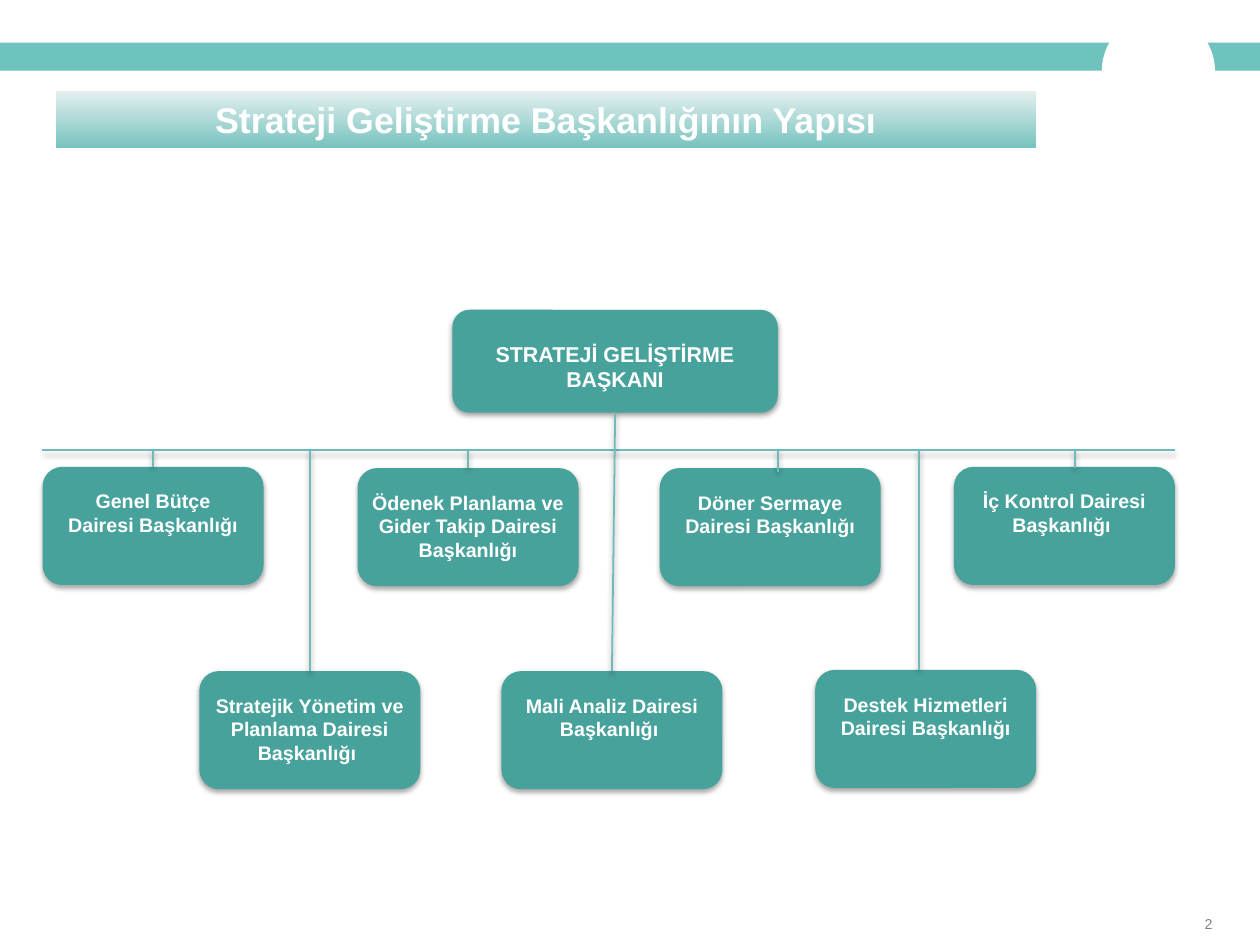
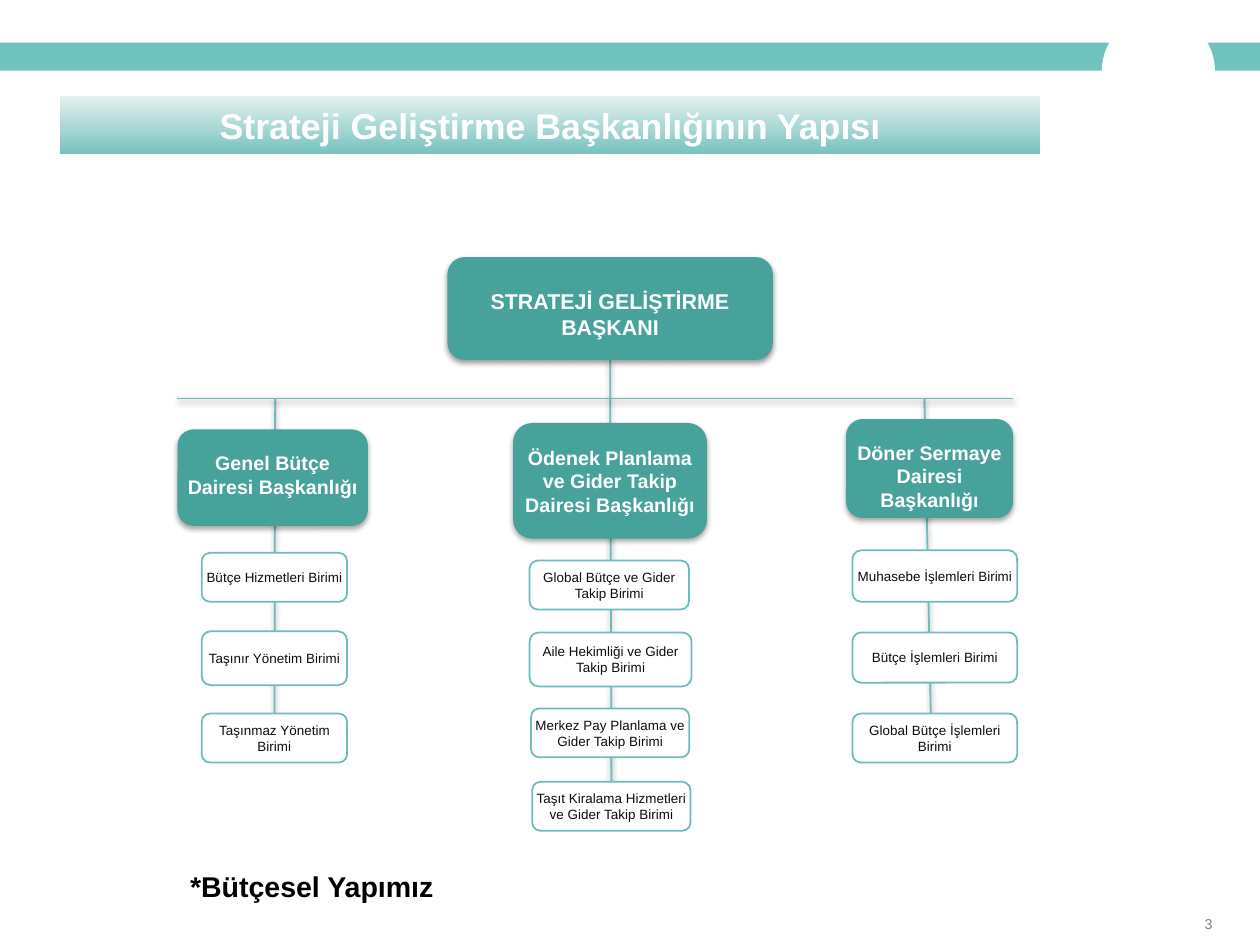
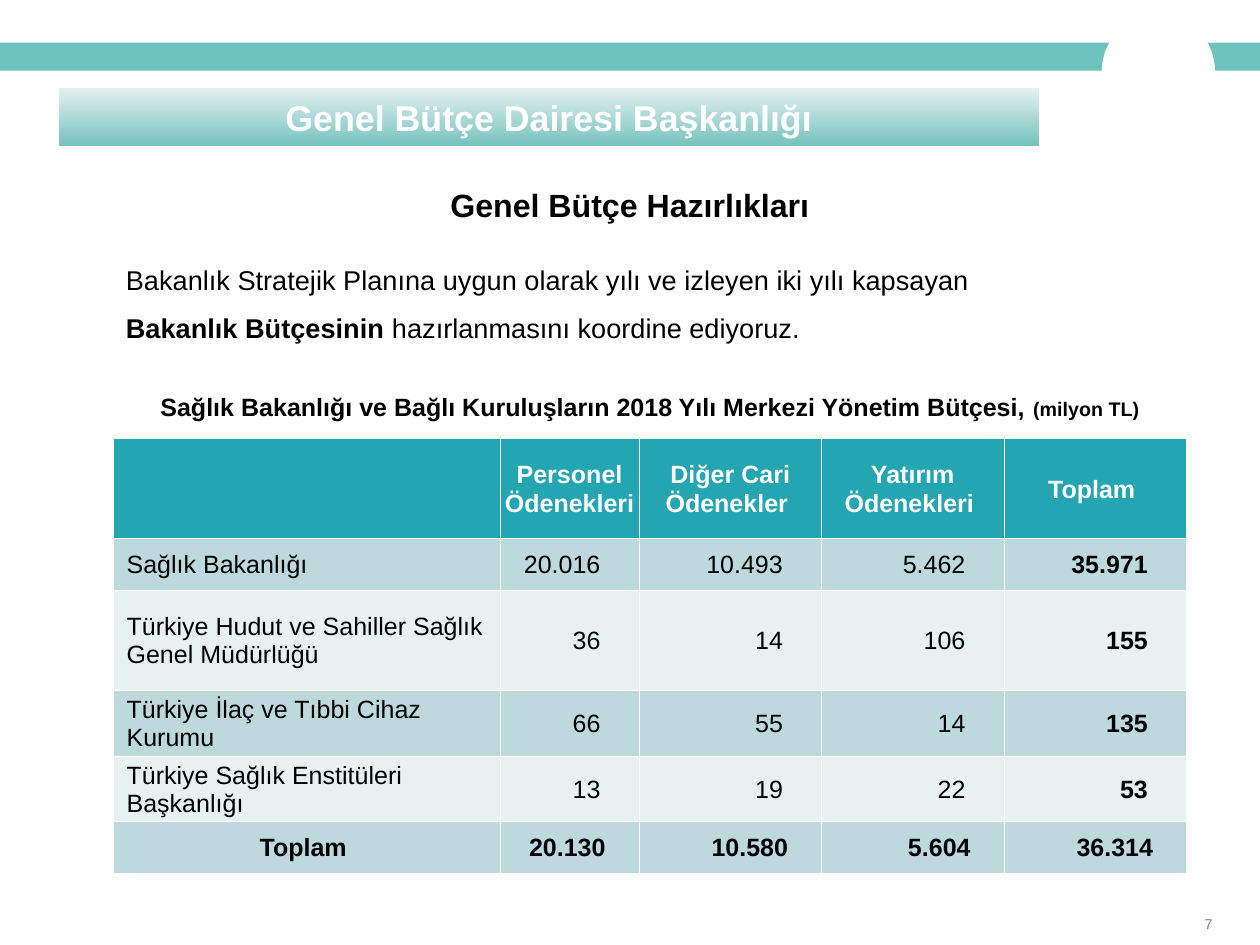
from dataclasses import dataclass

from pptx import Presentation, util as u
from pptx.dml.color import RGBColor
from pptx.enum import shapes, text
from pptx.oxml import parse_xml
from pptx.oxml.ns import nsdecls

Pt = u.Pt
PP, MSO = text.PP_ALIGN, text.MSO_ANCHOR


class Theme:
    font = "Arial"
    band, teal, line = "6FC3BF", "48A29C", "6DBCBB"
    grad_top, grad_end = "E1EFEE", "75C2BD"
    white, black, ink, grey = "FFFFFF", "000000", "0D0D0D", "808080"
    head, odd, even = "23A6B2", "BDD9DD", "E8F1F2"
    title, sub, note, para, cell, boss, unit, page, leaf = 20, 18, 16, 15.2, 14, 12, 11, 8, 7.5


@dataclass
class Style:
    size: float
    color: str = Theme.black
    bold: bool = True
    align: int = PP.CENTER
    anchor: int = MSO.TOP
    ins: tuple = (7.2, 3.6, 7.2, 3.6)
    fill: str = ""
    line: str = ""
    shadow: int = 0


TITLE = Style(Theme.title, Theme.white, anchor=MSO.MIDDLE, ins=(5.8, 5.8, 5.8, 5.8))
PAGE = Style(Theme.page, Theme.grey, False, PP.LEFT, MSO.MIDDLE, (0, 0, 0, 0))
SUB = Style(Theme.sub)
PARA = Style(Theme.para, bold=False, align=PP.LEFT)
NOTE = Style(Theme.note, align=PP.LEFT)
BOSS = Style(Theme.boss, Theme.white, ins=(7.2, 14.5, 7.2, 3.6), fill=Theme.teal, shadow=38)
UNIT = Style(Theme.unit, Theme.white, ins=(2.2, 9.4, 2.2, 3.6), fill=Theme.teal, shadow=35)
LEAF = Style(Theme.leaf, Theme.ink, False, PP.CENTER, MSO.MIDDLE, (0.7, 3.6, 0.7, 3.6),
             Theme.white, Theme.line)

SHADOW = (f'<a:effectLst {nsdecls("a")}><a:outerShdw blurRad="39370" dist="20320" dir="5400000" '
          'rotWithShape="0"><a:srgbClr val="000000"><a:alpha val="%d000"/></a:srgbClr>'
          '</a:outerShdw></a:effectLst>')
rgb = RGBColor.from_string


def box(s, at, txt, st):
    """Title, rounded box or plain text box, chosen by its style."""
    at = [Pt(v) for v in at]
    if st is TITLE:
        sp = s.shapes.title
        sp.left, sp.top, sp.width, sp.height = at
    elif st.fill:
        sp = s.shapes.add_shape(shapes.MSO_SHAPE.ROUNDED_RECTANGLE, *at)
        sp.fill.solid()
        sp.fill.fore_color.rgb = rgb(st.fill)
        if st.line:
            sp.line.color.rgb = rgb(st.line)
            sp.line.width = Pt(1)
        else:
            sp.line.fill.background()
        if st.shadow:
            sp._element.spPr.append(parse_xml(SHADOW % st.shadow))
        else:
            sp.shadow.inherit = False
    else:
        sp = s.shapes.add_textbox(*at)
    tf = sp.text_frame
    tf.word_wrap, tf.auto_size = True, text.MSO_AUTO_SIZE.NONE
    tf.vertical_anchor = st.anchor
    tf.margin_left, tf.margin_top, tf.margin_right, tf.margin_bottom = [Pt(v) for v in st.ins]
    tf.text = txt
    for p in tf.paragraphs:
        p.alignment = st.align
        p.font.name, p.font.size, p.font.bold = Theme.font, Pt(st.size), st.bold
        p.font.color.rgb = rgb(st.color)
    return sp


def link(s, x1, y1, x2, y2):
    """Thin teal line with a soft shadow."""
    cx = s.shapes.add_connector(shapes.MSO_CONNECTOR.STRAIGHT, Pt(x1), Pt(y1), Pt(x2), Pt(y2))
    cx.line.color.rgb = rgb(Theme.line)
    cx.line.width = Pt(1)
    cx._element.spPr.append(parse_xml(SHADOW % 38))
    return cx


prs = Presentation()
prs.slide_width, prs.slide_height = Pt(705.6), Pt(529.2)
layout = prs.slide_layouts[5]

# Slides with title bar and page number
slides = []
for title, x, y, page in [("Strateji Geliştirme Başkanlığının Yapısı", 31, 50.4, "2"),
                          ("Strateji Geliştirme Başkanlığının Yapısı", 33.5, 53.6, "3"),
                          ("Genel Bütçe Dairesi Başkanlığı", 32.7, 49, "7")]:
    s = prs.slides.add_slide(layout)
    sp = box(s, (x, y, 549.4, 33.1), title, TITLE)
    sp.fill.gradient()
    sp.fill.gradient_angle = 270
    for stop, pos, color in zip(sp.fill.gradient_stops, (0.04, 1), (Theme.grad_top, Theme.grad_end)):
        stop.position = pos
        stop.color.rgb = rgb(color)
    sp.line.color.rgb = rgb(Theme.white)
    sp.line.width = Pt(0.75)
    box(s, (674.6, 512.6, 10, 9.4), page, PAGE)
    slides.append(s)

# Top band and round cut-out, moved to the shared layout
for i, (kind, at, color) in enumerate([
        (shapes.MSO_SHAPE.RECTANGLE, (0, 23.8, 705.6, 15.8), Theme.band),
        (shapes.MSO_SHAPE.OVAL, (617, 7.9, 63.4, 64), Theme.white)]):
    sp = slides[0].shapes.add_shape(kind, *[Pt(v) for v in at])
    sp.fill.solid()
    sp.fill.fore_color.rgb = rgb(color)
    sp.line.fill.background()
    sp.shadow.inherit = False
    layout.shapes.element.insert(2 + i, sp._element)

# Slide 1: departments; drop is the line's end when it is off the box centre
s = slides[0]
bus, w, h = 252, 123.8, 66.2
link(s, 658.1, bus, 23.8, bus)
boss = box(s, (253.4, 173.5, 182.2, 57.6), "STRATEJİ GELİŞTİRME BAŞKANI", BOSS)
for x, y, txt, drop in [
        (23.8, 261.4, "Genel Bütçe\nDairesi Başkanlığı", None),
        (200.2, 262.1, "Ödenek Planlama ve Gider Takip Dairesi Başkanlığı", None),
        (369.4, 262.1, "Döner Sermaye Dairesi Başkanlığı", (435.6, 264.2)),
        (534.2, 261.4, "İç Kontrol Dairesi Başkanlığı ", (601.9, 262.1)),
        (111.6, 375.8, "Stratejik Yönetim ve Planlama Dairesi Başkanlığı ", None),
        (456.5, 375.1, "Destek Hizmetleri Dairesi Başkanlığı", (514.8, 375.1)),
        (280.8, 375.8, "Mali Analiz Dairesi Başkanlığı ", None)]:
    sp = box(s, (x, y, w, h), txt, UNIT)
    end = drop or (x + w / 2, y)
    cx = link(s, end[0], bus, *end)
    if not drop:
        cx.end_connect(sp, 0)
cx.begin_connect(boss, 2)  # the last department hangs straight from the head

# Slide 2: three departments with their units, lines behind the boxes
s = slides[1]
bus = 223.2
left = link(s, 154.1, bus, 153.7, 399.6)
middle = link(s, 341.7, 201.6, 342.4, 437.8)
link(s, 517.7, bus, 521.3, 402.5)
link(s, 567.4, bus, 99.4, bus)
boss = box(s, (250.6, 144, 182.2, 57.6), "STRATEJİ GELİŞTİRME BAŞKANI", BOSS)
columns = [
    ((99.4, 240.5, 106.6, 54), "Genel Bütçe\nDairesi Başkanlığı", [
        ((113, 309.6, 81.4, 27.4), "Bütçe Hizmetleri Birimi"),
        ((113, 353.5, 81.4, 30.2), "Taşınır Yönetim Birimi"),
        ((113, 399.6, 81.4, 27.4), "Taşınmaz Yönetim Birimi")]),
    ((473.8, 234.7, 93.6, 55.4), "Döner Sermaye Dairesi Başkanlığı", [
        ((477.4, 308.2, 92.2, 28.8), "Muhasebe İşlemleri Birimi"),
        ((477.4, 354.2, 92.2, 28.1), "Bütçe İşlemleri Birimi"),
        ((477.4, 399.6, 92.2, 27.4), "Global Bütçe İşlemleri Birimi")]),
    ((287.3, 236.9, 108.7, 64.8), "Ödenek Planlama ve Gider Takip Dairesi Başkanlığı", [
        ((296.6, 313.9, 89.3, 27.4), "Global Bütçe ve Gider Takip Birimi"),
        ((296.6, 354.2, 90.7, 30.2), "Aile Hekimliği ve Gider Takip Birimi"),
        ((297.4, 396.7, 88.6, 27.4), "Merkez Pay Planlama ve Gider Takip Birimi"),
        ((298.1, 437.8, 88.6, 27.4), "Taşıt Kiralama Hizmetleri ve Gider Takip Birimi")])]
last = []
for at, txt, leaves in columns:
    box(s, at, txt, UNIT)
    for leaf_at, leaf in leaves:
        sp = box(s, leaf_at, leaf, LEAF)
    last.append(sp)
left.end_connect(last[0], 0)
middle.begin_connect(boss, 2)
middle.end_connect(last[2], 0)
box(s, (99.4, 483.1, 200, 26.6), "*Bütçesel Yapımız", NOTE)

# Slide 3: heading and paragraph
s = slides[2]
box(s, (0, 100, 705.6, 28.8), "Genel Bütçe Hazırlıkları", SUB)
sp = box(s, (63.4, 134.6, 540, 59),
         "Bakanlık Stratejik Planına uygun olarak yılı ve izleyen iki yılı kapsayan ", PARA)
p = sp.text_frame.paragraphs[0]
p.line_spacing = 1.5
for txt, bold in [("Bakanlık Bütçesinin", True), (" hazırlanmasını koordine ediyoruz.", False)]:
    r = p.add_run()
    r.text, r.font.bold = txt, bold

# Slide 3: budget table, caption in its first row
rows = [
    ("Sağlık Bakanlığı ve Bağlı Kuruluşların 2018 Yılı Merkezi Yönetim Bütçesi, ", "", "", "", ""),
    ("", "Personel Ödenekleri ", "Diğer Cari Ödenekler ", "Yatırım Ödenekleri ", "Toplam "),
    ("Sağlık Bakanlığı", "20.016", "10.493", "5.462", "35.971"),
    ("Türkiye Hudut ve Sahiller Sağlık Genel Müdürlüğü", "36", "14", "106", "155"),
    ("Türkiye İlaç ve Tıbbi Cihaz Kurumu", "66", "55", "14", "135"),
    ("Türkiye Sağlık Enstitüleri\nBaşkanlığı", "13", "19", "22", "53"),
    ("Toplam ", "20.130", "10.580", "5.604", "36.314")]
fills = [None, Theme.head, Theme.odd, Theme.even, Theme.odd, Theme.even, Theme.odd]
heights = [34.6, 56.2, 28.8, 56.2, 36.7, 36.7, 28.8]
widths = [216.7, 77.8, 102.2, 102.2, 102.2]
tbl = s.shapes.add_table(len(rows), len(widths), Pt(63.4), Pt(211), Pt(sum(widths)),
                         Pt(sum(heights))).table
tbl.first_row = tbl.horz_banding = False
for col, width in zip(tbl.columns, widths):
    col.width = Pt(width)
total = len(rows) - 1
for i, values in enumerate(rows):
    tbl.rows[i].height = Pt(heights[i])
    for j, value in enumerate(values):
        c = tbl.cell(i, j)
        number, name = i > 1 and j > 0, 1 < i < total and j == 0
        c.vertical_anchor = MSO.MIDDLE
        c.margin_left = Pt(7.5 if name else 0.7)
        c.margin_right = Pt((18.7 if i == total else 21.6) if number else 0.7)
        c.margin_top, c.margin_bottom = Pt(0.7), Pt(0)
        c.text = value
        for p in c.text_frame.paragraphs:
            p.alignment = PP.RIGHT if number else PP.LEFT if name else PP.CENTER
            p.font.name, p.font.size = Theme.font, Pt(Theme.cell)
            p.font.bold = i < 2 or i == total or j == 4
            p.font.color.rgb = rgb(Theme.white if i == 1 else Theme.black)
        tcPr = c._tc.get_or_add_tcPr()
        for side in ("lnL", "lnR", "lnT", "lnB"):
            tcPr.append(parse_xml(f'<a:{side} {nsdecls("a")} w="6350"><a:solidFill><a:srgbClr '
                                  f'val="{Theme.white}"/></a:solidFill></a:{side}>'))
        if fills[i]:
            c.fill.solid()
            c.fill.fore_color.rgb = rgb(fills[i])
        else:
            c.fill.background()
caption = tbl.cell(0, 0)
caption.merge(tbl.cell(0, 4))
r = caption.text_frame.paragraphs[0].add_run()
r.text, r.font.size = "(milyon TL)", Pt(Theme.unit)

prs.save("out.pptx")
